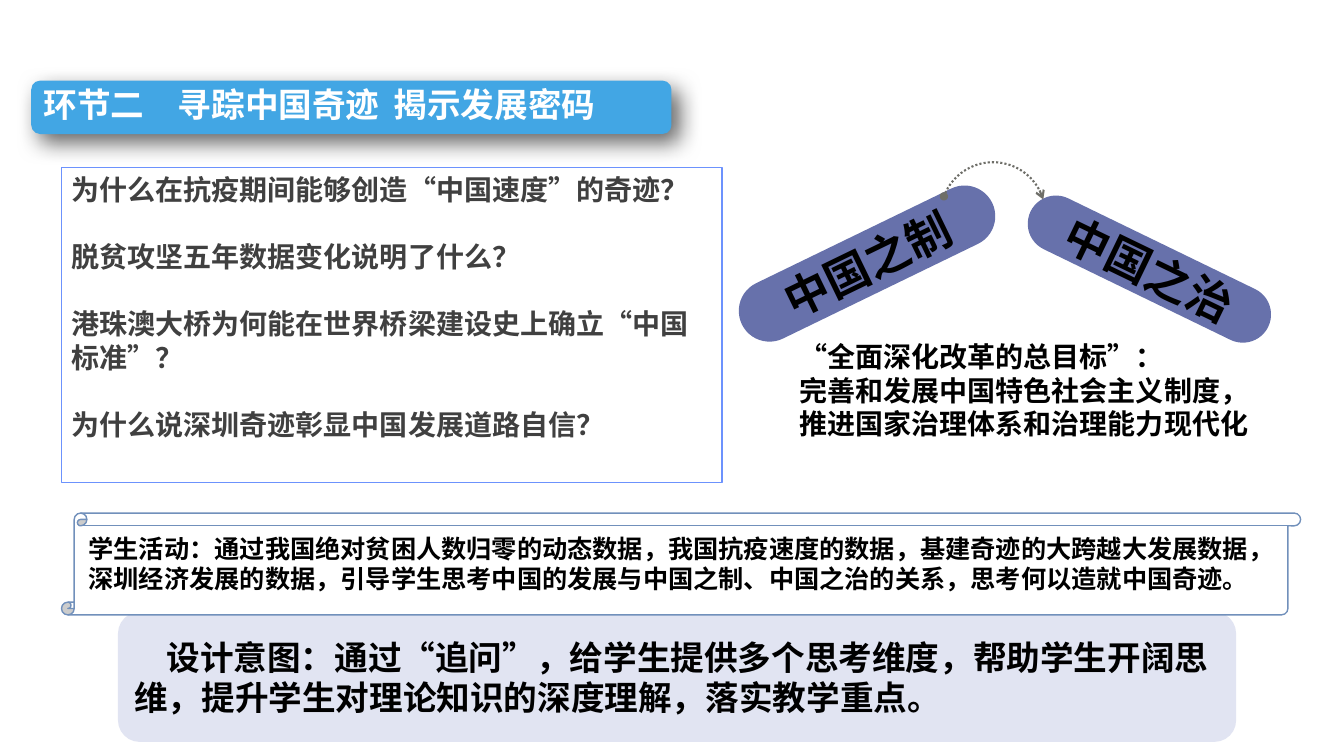
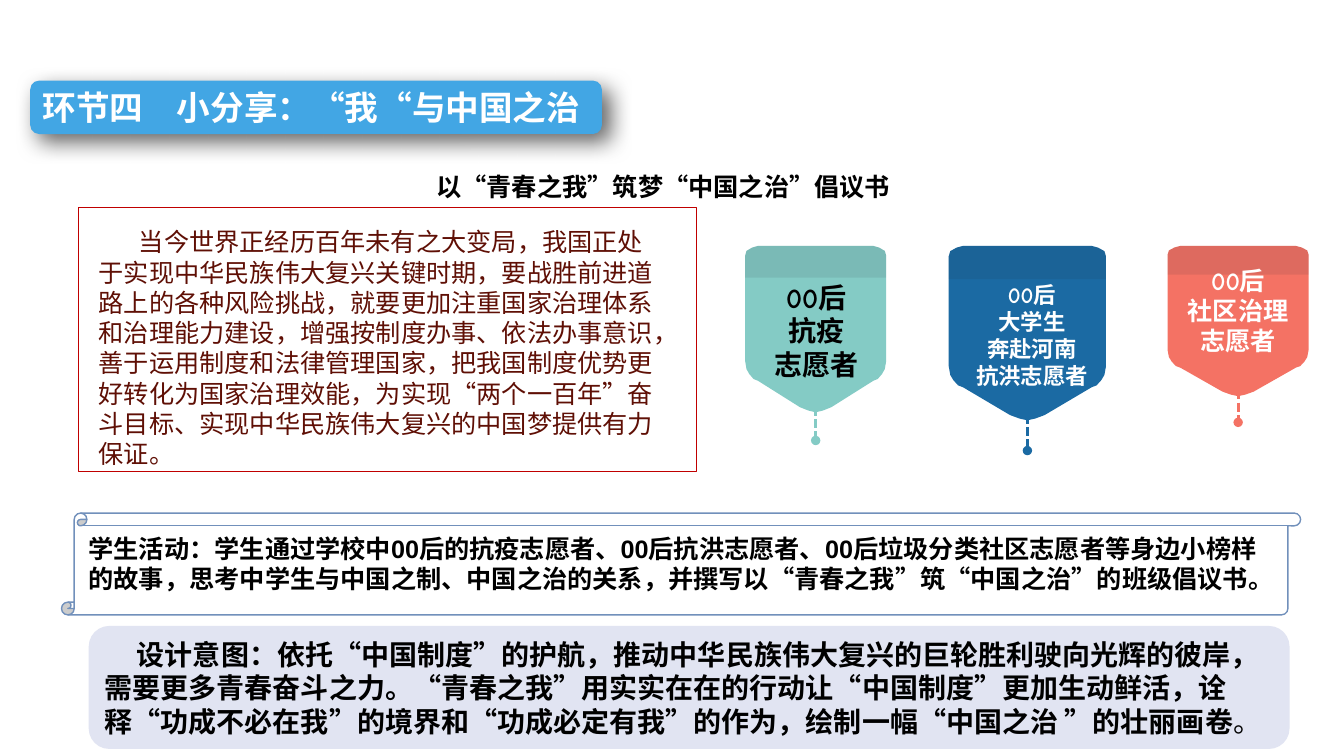
from dataclasses import dataclass

from lxml import etree
from pptx import Presentation
from pptx.dml.color import RGBColor
from pptx.enum.dml import MSO_LINE
from pptx.enum.lang import MSO_LANGUAGE_ID
from pptx.enum.shapes import MSO_CONNECTOR, MSO_SHAPE
from pptx.enum.text import MSO_ANCHOR, PP_ALIGN
from pptx.oxml.ns import qn
from pptx.util import Pt

PX = 9144  # EMU per px, 100 px to the inch
ROUNDED, RECTANGLE = MSO_SHAPE.ROUNDED_RECTANGLE, MSO_SHAPE.RECTANGLE
SCROLL, ARC = MSO_SHAPE.VERTICAL_SCROLL, MSO_SHAPE.ARC
DOTTED, DASHED = MSO_LINE.ROUND_DOT, MSO_LINE.SQUARE_DOT
LEFT, CENTER = PP_ALIGN.LEFT, PP_ALIGN.CENTER
TOP, MIDDLE = MSO_ANCHOR.TOP, MSO_ANCHOR.MIDDLE
CHINESE = MSO_LANGUAGE_ID.SIMPLIFIED_CHINESE

# Left half of a badge outline, as fractions of its width and height
BADGE_CORNER = [(0.09, 0), (0.05, 0.01), (0.01, 0.03), (0, 0.06)]
BADGE_POINT = [(0, 0.69), (0.01, 0.74), (0.03, 0.77), (0.06, 0.8),
               (0.09, 0.81), (0.39, 0.97), (0.45, 0.99), (0.5, 1)]
BADGE_CAP = [(0, 0.19)]


@dataclass(frozen=True)
class Theme:
    # Colours
    banner: str = "42A6E4"
    panel: str = "E1E4F2"
    pill: str = "6771AB"
    black: str = "000000"
    white: str = "FFFFFF"
    question: str = "404040"
    question_line: str = "6C92FD"
    letter: str = "5F0F05"
    letter_line: str = "C00000"
    scroll_line: str = "7190BB"
    arc: str = "6E6E68"
    cap: str = "222A35"
    teal: str = "84CBC5"
    blue: str = "1B6AA3"
    coral: str = "F47264"
    # Fonts
    chinese: str = "Noto Sans CJK SC"
    plain: str = "Arial"
    goal: str = "Calibri"
    question_font: str = "League Spartan"
    badge_font: str = "Comic Neue"
    # Type sizes
    pill_size: int = 32
    title_size: int = 24
    large: int = 20
    body: int = 18
    small: int = 16


THEME = Theme()


def color(value):
    return RGBColor.from_string(value)


def add_line_ends(line, **ends):
    properties = line._get_or_add_ln()
    for name, kind in ends.items():
        etree.SubElement(properties, qn(f"a:{name}"), type=kind)


class Deck:
    def __init__(self):
        self.presentation = Presentation()
        self.presentation.slide_width = 1333 * PX
        self.presentation.slide_height = 750 * PX
        self.slide = None

    def new_slide(self):
        layout = self.presentation.slide_layouts[6]
        self.slide = self.presentation.slides.add_slide(layout)

    def paint(self, shape, fill=None, line=None):
        shape.shadow.inherit = False
        if fill:
            shape.fill.solid()
            shape.fill.fore_color.rgb = color(fill)
        else:
            shape.fill.background()
        if line:
            shape.line.color.rgb = color(line)
            shape.line.width = Pt(1)
        else:
            shape.line.fill.background()

    def box(self, kind, bounds, fill=None, line=None):
        shape = self.slide.shapes.add_shape(kind, *(n * PX for n in bounds))
        self.paint(shape, fill, line)
        return shape

    def fill_text(self, shape, lines, size, text_color, font=THEME.chinese, bold=True,
                  align=LEFT, anchor=TOP, indent=0, gap=0, spacing=None, tabs=()):
        frame = shape.text_frame
        frame.word_wrap = True
        frame.vertical_anchor = anchor
        for index, text in enumerate(lines):
            paragraph = frame.add_paragraph() if index else frame.paragraphs[0]
            paragraph.text = text
            paragraph.alignment = align
            if index and gap:
                paragraph.space_before = Pt(gap)
            if spacing:
                paragraph.line_spacing = spacing
            properties = paragraph._p.get_or_add_pPr()
            if indent:
                properties.set("indent", str(indent * PX))
            if tabs:
                tab_list = etree.SubElement(properties, qn("a:tabLst"))
                for stop in tabs:
                    etree.SubElement(tab_list, qn("a:tab"), pos=str(stop * PX), algn="l")
            style = paragraph.font
            style.size, style.bold, style.name = Pt(size), bold, font
            style.color.rgb = color(text_color)
            style.language_id = CHINESE
            etree.SubElement(style._element, qn("a:ea"), typeface=THEME.chinese)
        return frame

    def text(self, bounds, lines, size, text_color, **style):
        shape = self.slide.shapes.add_textbox(*(n * PX for n in bounds))
        return self.fill_text(shape, lines, size, text_color, **style)

    def banner(self, bounds, title, tabs, spacing=None):
        shape = self.box(ROUNDED, bounds, THEME.banner)
        effects = shape._element.spPr.find(qn("a:effectLst"))
        shadow = etree.SubElement(
            effects, qn("a:outerShdw"), blurRad=str(Pt(16)), dist=str(Pt(8)),
            dir="2700000", algn="tl", rotWithShape="0")
        shade = etree.SubElement(shadow, qn("a:srgbClr"), val=THEME.black)
        etree.SubElement(shade, qn("a:alpha"), val="60000")
        self.fill_text(shape, [title], THEME.title_size, THEME.white,
                       anchor=MIDDLE, spacing=spacing, tabs=tabs)

    def intent(self, bounds, text, size):
        shape = self.box(ROUNDED, bounds, THEME.panel)
        return self.fill_text(shape, [text], size, THEME.black, anchor=MIDDLE, indent=32)

    def activity(self, text):
        self.box(SCROLL, (61, 509, 1229, 101), THEME.white, THEME.scroll_line)
        self.text((78, 524, 1195, 71), [text], THEME.body, THEME.black, font=THEME.plain)

    def pill(self, bounds, text, angle):
        shape = self.box(ROUNDED, bounds, THEME.pill)
        shape.adjustments[0] = 0.5
        shape.rotation = angle
        self.fill_text(shape, [text], THEME.pill_size, THEME.black,
                       align=CENTER, anchor=MIDDLE)

    def linking_arc(self, bounds, start, end):
        shape = self.box(ARC, bounds, line=THEME.arc)
        # Arc angles are stored in 60000ths of a degree
        shape.adjustments[0] = start * 0.6
        shape.adjustments[1] = end * 0.6
        shape.line.width = Pt(1.5)
        shape.line.dash_style = DOTTED
        add_line_ends(shape.line, headEnd="oval", tailEnd="arrow")

    def mirrored_outline(self, bounds, half, fill):
        left, top, width, height = bounds
        outline = half + [(1 - x, y) for x, y in reversed(half)]
        points = [((left + x * width) * PX, (top + y * height) * PX) for x, y in outline]
        builder = self.slide.shapes.build_freeform(*points[0])
        builder.add_line_segments(points[1:], close=True)
        shape = builder.convert_to_shape()
        self.paint(shape, fill)
        return shape

    def badge(self, bounds, fill, drop):
        left, top, width, height = bounds
        center, bottom = left + width // 2, top + height
        # Dashed pendant, body, then the darker cap
        pendant = self.slide.shapes.add_connector(
            MSO_CONNECTOR.STRAIGHT, center * PX, (bottom - 6) * PX,
            center * PX, (bottom + drop) * PX)
        pendant.line.color.rgb = color(fill)
        pendant.line.width = Pt(2.25)
        pendant.line.dash_style = DASHED
        add_line_ends(pendant.line, tailEnd="oval")
        etree.SubElement(pendant._element.spPr, qn("a:effectLst"))
        self.mirrored_outline(bounds, BADGE_CORNER + BADGE_POINT, fill)
        cap = self.mirrored_outline(bounds, BADGE_CORNER + BADGE_CAP, THEME.cap)
        tint = cap._element.spPr.find(qn("a:solidFill")).find(qn("a:srgbClr"))
        etree.SubElement(tint, qn("a:alpha"), val="10000")


def build_miracle_slide(deck):
    deck.new_slide()
    deck.banner((31, 80, 635, 53), "环节二\t寻踪中国奇迹\t揭示发展密码", (133, 347), 0.85)
    deck.intent((117, 607, 1109, 129),
                "设计意图：通过“追问”，给学生提供多个思考维度，帮助学生开阔思维，"
                "提升学生对理论知识的深度理解，落实教学重点。", THEME.title_size)

    # Questions
    questions = deck.box(RECTANGLE, (61, 166, 655, 313), THEME.white, THEME.question_line)
    deck.fill_text(questions, [
        "为什么在抗疫期间能够创造“中国速度”的奇迹？",
        "脱贫攻坚五年数据变化说明了什么？",
        "港珠澳大桥为何能在世界桥梁建设史上确立“中国标准”？",
        "为什么说深圳奇迹彰显中国发展道路自信？",
    ], THEME.large, THEME.question, font=THEME.question_font, gap=24)

    # System and governance
    deck.pill((722, 231, 276, 61), "中国之制", -25.9)
    deck.pill((1009, 239, 262, 56), "中国之治", 25.9)
    deck.linking_arc((933, 161, 104, 104), 200.4, 343.2)
    deck.text((783, 332, 472, 111), [
        "“全面深化改革的总目标”：",
        "完善和发展中国特色社会主义制度，",
        "推进国家治理体系和治理能力现代化",
    ], THEME.large, THEME.black, font=THEME.goal)

    deck.activity("学生活动：通过我国绝对贫困人数归零的动态数据，我国抗疫速度的数据，"
                  "基建奇迹的大跨越大发展数据，深圳经济发展的数据，引导学生思考中国的发展与"
                  "中国之制、中国之治的关系，思考何以造就中国奇迹。")


def build_sharing_slide(deck):
    deck.new_slide()
    deck.banner((30, 80, 567, 53), "环节四\t小分享：“我“与中国之治", (133,))

    # Open letter
    deck.text((423, 165, 517, 40), ["以“青春之我”筑梦“中国之治”倡议书"],
              THEME.body, THEME.black, font=THEME.plain)
    deck.text((88, 220, 577, 283), [
        "当今世界正经历百年未有之大变局，我国正处于实现中华民族伟大复兴关键时期，"
        "要战胜前进道路上的各种风险挑战，就要更加注重国家治理体系和治理能力建设，"
        "增强按制度办事、依法办事意识，善于运用制度和法律管理国家，"
        "把我国制度优势更好转化为国家治理效能，为实现“两个一百年”奋斗目标、"
        "实现中华民族伟大复兴的中国梦提供有力保证。",
    ], THEME.body, THEME.letter, bold=False, indent=40)
    deck.box(RECTANGLE, (78, 206, 613, 262), line=THEME.letter_line)

    # Volunteer badges
    badges = [
        ((739, 244, 140, 165), THEME.teal, 28, (757, 273, 105, 111),
         ["00后", "抗疫", "志愿者"], THEME.large, THEME.black),
        ((941, 244, 156, 173), THEME.blue, 30, (941, 274, 165, 118),
         ["00后", "大学生", "奔赴河南", "抗洪志愿者"], THEME.small, THEME.white),
        ((1158, 244, 140, 149), THEME.coral, 26, (1167, 258, 122, 101),
         ["00后", "社区治理", "志愿者"], THEME.body, THEME.white),
    ]
    for bounds, fill, drop, text_bounds, lines, size, text_color in badges:
        deck.badge(bounds, fill, drop)
        deck.text(text_bounds, lines, size, text_color, font=THEME.badge_font, align=CENTER)

    frame = deck.intent((88, 621, 1191, 122),
                        "设计意图：依托“中国制度”的护航，推动中华民族伟大复兴的巨轮胜利驶向光辉的彼岸，"
                        "需要更多青春奋斗之力。“青春之我”用实实在在的行动让“中国制度”更加生动鲜活，"
                        "诠释“功成不必在我”的境界和“功成必定有我”的作为，"
                        "绘制一幅“中国之治 ”的壮丽画卷", THEME.large)
    full_stop = frame.paragraphs[0].add_run()
    full_stop.text = "。"
    full_stop.font.bold = False

    deck.activity("学生活动：学生通过学校中00后的抗疫志愿者、00后抗洪志愿者、"
                  "00后垃圾分类社区志愿者等身边小榜样的故事，思考中学生与中国之制、中国之治的关系，"
                  "并撰写以“青春之我”筑“中国之治”的班级倡议书。")


def main():
    deck = Deck()
    build_miracle_slide(deck)
    build_sharing_slide(deck)
    deck.presentation.save("out.pptx")


if __name__ == "__main__":
    main()
